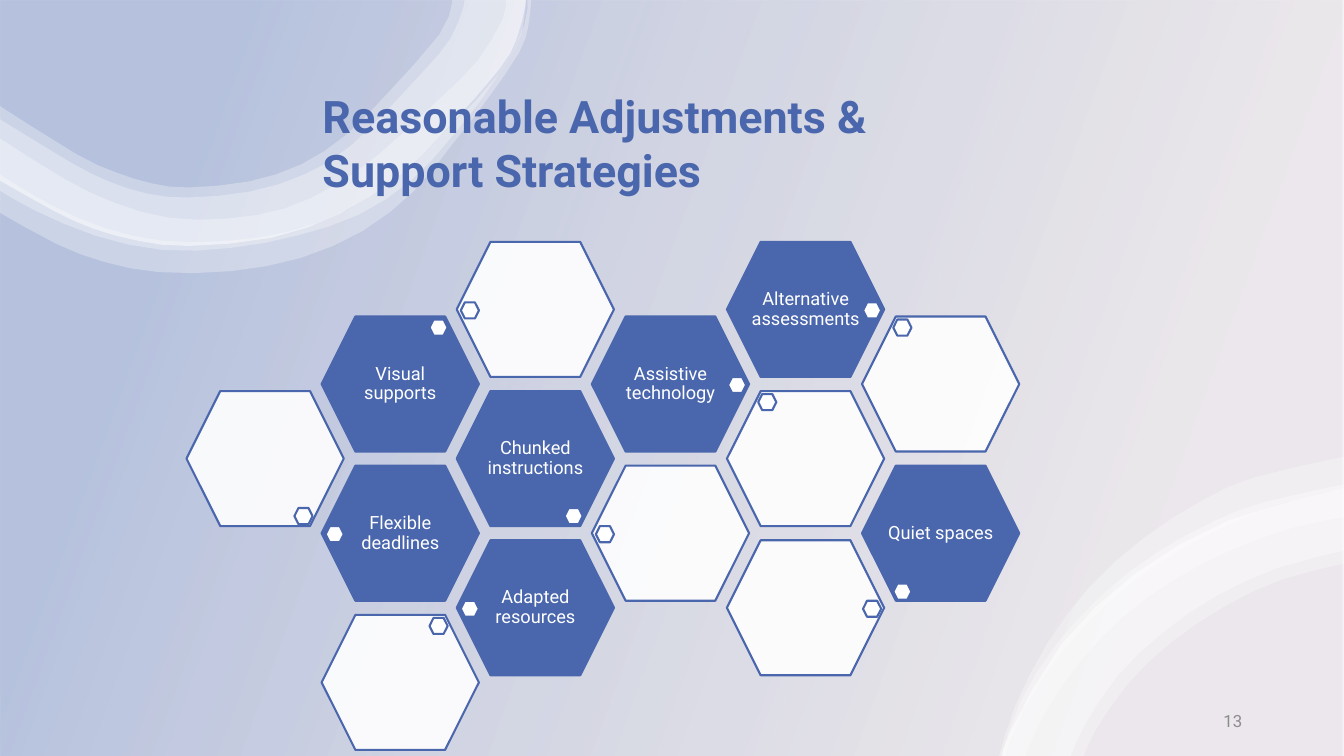
from dataclasses import dataclass

from lxml import etree
from pptx import Presentation
from pptx.dml.color import RGBColor
from pptx.enum.shapes import MSO_SHAPE
from pptx.enum.text import MSO_ANCHOR, PP_ALIGN
from pptx.oxml.ns import qn
from pptx.util import Inches, Pt

HEXAGON, RECTANGLE = MSO_SHAPE.HEXAGON, MSO_SHAPE.RECTANGLE
TOP, MIDDLE = MSO_ANCHOR.TOP, MSO_ANCHOR.MIDDLE
LEFT, CENTER, RIGHT = PP_ALIGN.LEFT, PP_ALIGN.CENTER, PP_ALIGN.RIGHT

COLOURS = {"blue": "4A66AC", "mauve": "9D90A0", "white": "FFFFFF", "grey": "8C8C8C"}
FONT = "Roboto"

# The page is a grid of one-inch squares; the honeycomb has its own columns and rows.
PAGE_COLUMNS, PAGE_ROWS = 13.33, 7.5
COMB_LEFT, COMB_TOP = 1.85, 2.4
COLUMN, ROW = 1.34, 0.74
CELL = (1.56, 1.34)
MARKER = (0.18, 0.16)
LABEL_OFFSET, LABEL = (0.23, 0.21), (1.1, 0.92)
MARKER_OFFSETS = {
    "left": (0.04, 0.6), "right": (1.35, 0.6),
    "top left": (0.31, 0.03), "top right": (1.07, 0.03),
    "bottom left": (0.31, 1.17), "bottom right": (1.07, 1.16),
}
CURVE_STEPS = 2

Point = tuple[float, float]


@dataclass(frozen=True)
class Cell:
    column: int
    row: int
    marker: str
    label: str = ""


@dataclass(frozen=True)
class Ribbon:
    """Two smooth edges, the second running back to the start of the first."""
    upper: list[Point]
    lower: list[Point]


@dataclass(frozen=True)
class TextStyle:
    size: float
    colour: str
    align: PP_ALIGN = LEFT
    anchor: MSO_ANCHOR = TOP
    bold: bool = False
    spacing: float = 1.0
    margins: tuple[float, float] = (0.1, 0.05)


TITLE_STYLE = TextStyle(32, "blue", bold=True)
NUMBER_STYLE = TextStyle(12, "grey", RIGHT, MIDDLE)
LABEL_STYLE = TextStyle(13, "white", CENTER, MIDDLE, spacing=0.9, margins=(0, 0.02))

CELLS = [
    Cell(1, 3, "left", "Flexible deadlines"),
    Cell(0, 2, "bottom right"),
    Cell(2, 2, "bottom right", "Chunked instructions"),
    Cell(3, 3, "left"),
    Cell(1, 1, "top right", "Visual supports"),
    Cell(2, 0, "left"),
    Cell(3, 1, "right", "Assistive technology"),
    Cell(4, 2, "top left"),
    Cell(4, 0, "right", "Alternative assessments"),
    Cell(5, 1, "top left"),
    Cell(5, 3, "bottom left", "Quiet spaces"),
    Cell(4, 4, "right"),
    Cell(2, 4, "left", "Adapted resources"),
    Cell(1, 5, "top right"),
]

TOP_LOWER_EDGE = [
    (-0.02, 1.78), (0.53, 2.09), (0.93, 2.27), (1.38, 2.39), (1.87, 2.44),
    (2.69, 2.36), (3.37, 2.12), (3.95, 1.75), (4.45, 1.26), (4.95, 0.69),
    (5.12, 0.4), (5.21, 0.06), (5.21, -0.01)]
BOTTOM_UPPER_EDGE = [
    (9.94, 7.5), (10.02, 7.26), (10.52, 6.4), (11.26, 5.69), (12.19, 5.16), (13.34, 4.84)]

TOP_RIBBONS = [
    Ribbon([(5.23, -0.01), (5.2, 0.25), (4.95, 0.73), (4.45, 1.27), (3.92, 1.77),
            (3.43, 2.09), (2.86, 2.3), (2.25, 2.39), (1.62, 2.39), (1.03, 2.26),
            (0.48, 2.02), (-0.02, 1.72)],
           [(-0.02, 2.1), (0.56, 2.42), (1.04, 2.6), (1.58, 2.7), (2.29, 2.69),
            (2.98, 2.56), (3.6, 2.29), (4.1, 1.9), (4.48, 1.44), (4.83, 0.99),
            (5.15, 0.52), (5.24, 0.26), (5.27, -0.01)]),
    Ribbon([(5.02, -0.01), (4.99, 0.18), (4.74, 0.6), (4.35, 0.99), (3.76, 1.53),
            (3.32, 1.84), (2.82, 2.07), (2.25, 2.17), (1.67, 2.16), (1.13, 2.01),
            (0.63, 1.77), (-0.02, 1.36)],
           [(-0.02, 1.88), (0.35, 2.09), (0.95, 2.34), (1.61, 2.48), (2.29, 2.46),
            (2.94, 2.34), (3.56, 2.13), (4.08, 1.79), (4.48, 1.36), (4.81, 0.94),
            (5.11, 0.47), (5.19, 0.25), (5.22, -0.01)]),
    Ribbon([(4.6, -0.01), (4.6, 0.06), (4.47, 0.38), (4.17, 0.74), (3.5, 1.43),
            (3.02, 1.73), (2.48, 1.9), (1.87, 1.96), (1.46, 1.92), (1.08, 1.8),
            (0.7, 1.61), (-0.02, 1.17)], TOP_LOWER_EDGE),
    Ribbon([(4.48, -0.01), (4.48, 0.05), (4.36, 0.34), (3.84, 0.93), (3.43, 1.34),
            (2.99, 1.63), (2.47, 1.8), (1.87, 1.86), (1.51, 1.82), (1.15, 1.71),
            (0.76, 1.53), (-0.02, 1.04)], TOP_LOWER_EDGE),
]
BOTTOM_RIBBONS = [
    Ribbon([(9.91, 7.5), (10.07, 7), (10.39, 6.38), (10.81, 5.82), (11.34, 5.34),
            (11.95, 4.95), (12.46, 4.73), (13.34, 4.53)],
           [(13.34, 4.85), (12.74, 4.99), (12.11, 5.24), (11.52, 5.57), (10.99, 5.98),
            (10.53, 6.47), (10.16, 7.03), (9.97, 7.5)]),
    Ribbon(BOTTOM_UPPER_EDGE,
           [(13.34, 5.59), (12.71, 5.75), (12.14, 6.02), (11.62, 6.37), (11.19, 6.78),
            (10.87, 7.24), (10.75, 7.5)]),
    Ribbon([(9.93, 7.5), (10.12, 6.96), (10.47, 6.4), (10.93, 5.9), (11.46, 5.49),
            (12.06, 5.16), (12.55, 4.98), (13.34, 4.8)],
           [(13.34, 5.13), (12.81, 5.24), (12.21, 5.46), (11.65, 5.75), (11.14, 6.12),
            (10.71, 6.57), (10.36, 7.08), (10.17, 7.5)]),
    Ribbon(BOTTOM_UPPER_EDGE,
           [(13.34, 5.46), (12.66, 5.64), (12.07, 5.91), (11.54, 6.27), (11.09, 6.7),
            (10.76, 7.19), (10.62, 7.5)]),
]


def rgb(name: str) -> RGBColor:
    return RGBColor.from_string(COLOURS[name])


def set_opacity(shape, *percents: int) -> None:
    """Give the shape's colours, in order, their opacity."""
    for colour, percent in zip(shape._element.spPr.iter(qn("a:srgbClr")), percents):
        etree.SubElement(colour, qn("a:alpha"), val=str(percent * 1000))


def smooth(knots: list[Point]) -> list[Point]:
    """Run a Catmull-Rom curve through the knots."""
    padded = [knots[0], *knots, knots[-1]]
    curve = []
    for a, b, c, d in zip(padded, padded[1:], padded[2:], padded[3:]):
        for step in range(CURVE_STEPS):
            t = step / CURVE_STEPS
            curve.append(tuple(
                q + t / 2 * (r - p + t * (2 * p - 5 * q + 4 * r - s
                                          + t * (3 * q - 3 * r + s - p)))
                for p, q, r, s in zip(a, b, c, d)))
    return curve + [knots[-1]]


def add_preset(shapes, kind: MSO_SHAPE, place: Point, size: Point):
    shape = shapes.add_shape(kind, *map(Inches, place + size))
    shape.shadow.inherit = False
    return shape


def add_backdrop(shapes) -> None:
    backdrop = add_preset(shapes, RECTANGLE, (0, 0), (PAGE_COLUMNS, PAGE_ROWS))
    backdrop.line.fill.background()
    backdrop.fill.gradient()
    backdrop.fill.gradient_angle = 160
    for stop, position, name in zip(backdrop.fill.gradient_stops, (0.16, 0.85), ("mauve", "blue")):
        stop.position = position
        stop.color.rgb = rgb(name)
    set_opacity(backdrop, 20, 40)


def add_ribbon(shapes, ribbon: Ribbon) -> None:
    outline = [(Inches(x), Inches(y)) for x, y in smooth(ribbon.upper) + smooth(ribbon.lower)]
    builder = shapes.build_freeform(*outline[0])
    builder.add_line_segments(outline[1:], close=True)
    shape = builder.convert_to_shape()
    shape.shadow.inherit = False
    shape.line.fill.background()
    shape.fill.solid()
    shape.fill.fore_color.rgb = rgb("white")
    set_opacity(shape, 30)


def add_text(shapes, text: str, place: Point, size: Point, style: TextStyle) -> None:
    frame = shapes.add_textbox(*map(Inches, place + size)).text_frame
    frame.word_wrap = True
    frame.vertical_anchor = style.anchor
    frame.margin_left = frame.margin_right = Inches(style.margins[0])
    frame.margin_top = frame.margin_bottom = Inches(style.margins[1])
    paragraph = frame.paragraphs[0]
    paragraph.alignment = style.align
    paragraph.line_spacing = style.spacing
    run = paragraph.add_run()
    run.text = text
    run.font.name, run.font.size, run.font.bold = FONT, Pt(style.size), style.bold
    run.font.color.rgb = rgb(style.colour)


def add_hexagon(shapes, place: Point, size: Point, fill: str, opacity: int = 100) -> None:
    hexagon = add_preset(shapes, HEXAGON, place, size)
    hexagon.fill.solid()
    hexagon.fill.fore_color.rgb = rgb(fill)
    if opacity < 100:
        set_opacity(hexagon, opacity)
    hexagon.line.color.rgb = rgb("blue")
    hexagon.line.width = Pt(1.5)


def add_cell(shapes, cell: Cell) -> None:
    left, top = COMB_LEFT + cell.column * COLUMN, COMB_TOP + cell.row * ROW
    if cell.label:
        add_hexagon(shapes, (left, top), CELL, "blue")
        dx, dy = LABEL_OFFSET
        add_text(shapes, cell.label, (left + dx, top + dy), LABEL, LABEL_STYLE)
    else:
        add_hexagon(shapes, (left, top), CELL, "white", 90)
    dx, dy = MARKER_OFFSETS[cell.marker]
    add_hexagon(shapes, (left + dx, top + dy), MARKER, "white")


def main() -> None:
    presentation = Presentation()
    presentation.slide_width, presentation.slide_height = Inches(PAGE_COLUMNS), Inches(PAGE_ROWS)
    shapes = presentation.slides.add_slide(presentation.slide_layouts[6]).shapes
    add_backdrop(shapes)
    for ribbons in (TOP_RIBBONS, BOTTOM_RIBBONS):
        group = shapes.add_group_shape()
        for ribbon in ribbons:
            add_ribbon(group.shapes, ribbon)
    add_text(shapes, "13", (9.42, 6.95), (3, 0.4), NUMBER_STYLE)
    add_text(shapes, "Reasonable Adjustments & Support Strategies",
             (3.1, 0.83), (6.69, 1.18), TITLE_STYLE)
    honeycomb = shapes.add_group_shape()
    for cell in CELLS:
        add_cell(honeycomb.shapes, cell)
    presentation.save("out.pptx")


if __name__ == "__main__":
    main()
